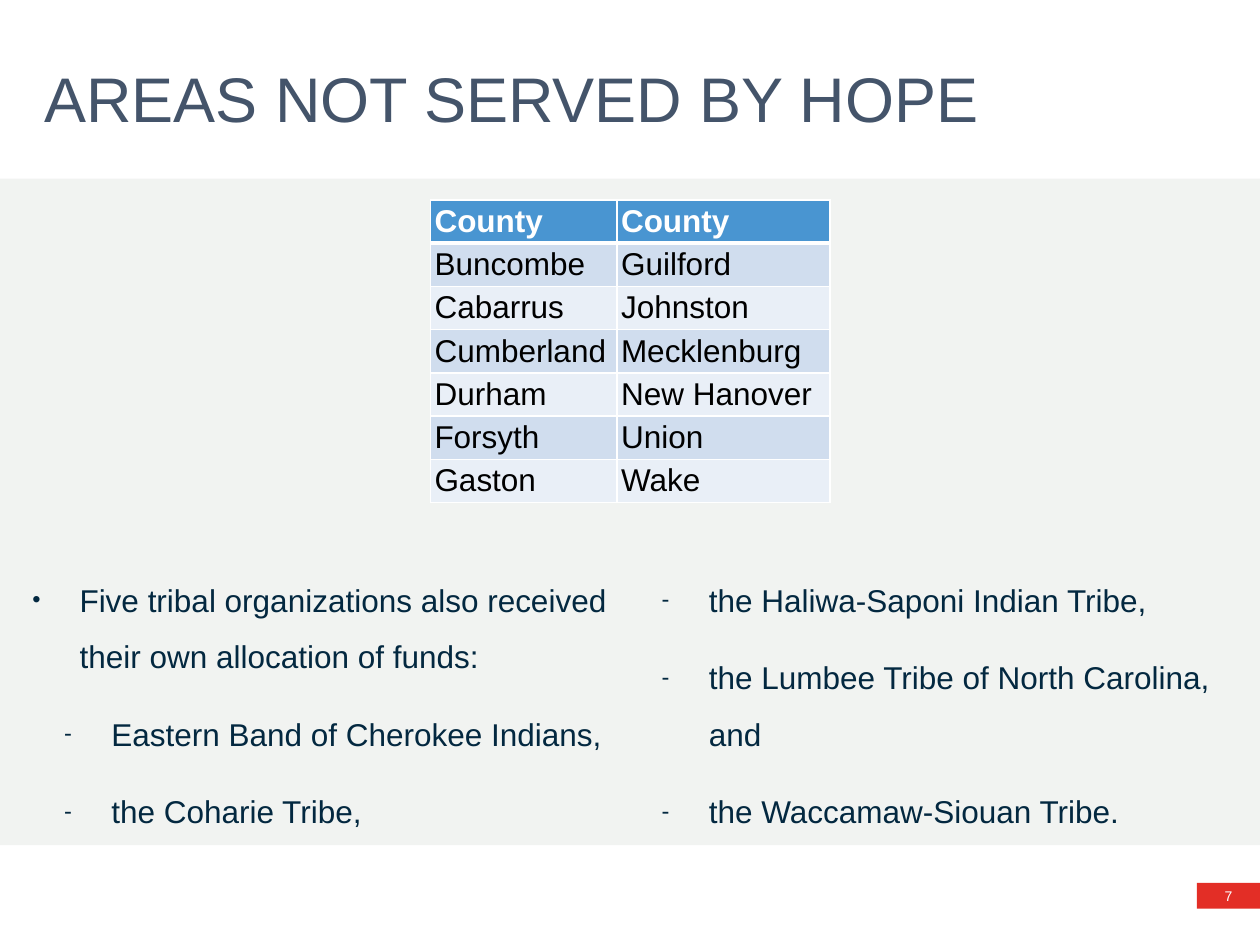
from lxml import etree
from pptx import Presentation
from pptx.dml.color import RGBColor
from pptx.enum import shapes, text
from pptx.oxml import ns
from pptx.util import Cm, Pt

COLORS = {
    "band": "F1F3F1", "badge": "E32E26", "title": "44546A", "body": "032840",
    "header": "4995D1", "odd": "D0DDEE", "even": "E9EFF7",
    "white": "FFFFFF", "black": "000000",
}
COUNTIES = [
    ("County", "County"),
    ("Buncombe", "Guilford"),
    ("Cabarrus", "Johnston"),
    ("Cumberland", "Mecklenburg"),
    ("Durham", "New Hanover"),
    ("Forsyth", "Union"),
    ("Gaston", "Wake"),
]
TRIBES = [
    "Eastern Band of Cherokee Indians,",
    "the Coharie Tribe,",
    "the Haliwa-Saponi Indian Tribe,",
    "the Lumbee Tribe of North Carolina, and",
    "the Waccamaw-Siouan Tribe.",
]


def rgb(name):
    return RGBColor.from_string(COLORS[name])


def add_xml(parent, tag, **attributes):
    return etree.SubElement(parent, ns.qn(tag), attributes)


def write(para, words, size=18, color="body", bold=False, align=text.PP_ALIGN.LEFT):
    """Add formatted words to a paragraph."""
    para.alignment = align
    span = para.add_run()
    span.text = words
    span.font.name = "Arial"
    span.font.size = Pt(size)
    span.font.bold = bold
    span.font.color.rgb = rgb(color)


def place(shape, box):
    shape.left, shape.top, shape.width, shape.height = (Cm(length) for length in box)


def set_insets(owner, inset):
    owner.margin_left = owner.margin_right = Cm(inset)
    owner.margin_top = owner.margin_bottom = Cm(inset)


def add_panel(page, box, color):
    panel = page.shapes.add_shape(
        shapes.MSO_SHAPE.RECTANGLE, *(Cm(length) for length in box))
    panel.shadow.inherit = False
    panel.fill.solid()
    panel.fill.fore_color.rgb = rgb(color)
    panel.line.fill.background()
    return panel


def add_band(page, box):
    """Tinted band behind the content."""
    band = add_panel(page, box, "band")
    page.shapes._spTree.insert(2, band._element)


def add_page_number(page, box, number):
    frame = add_panel(page, box, "badge").text_frame
    set_insets(frame, 0.13)
    frame.vertical_anchor = text.MSO_ANCHOR.MIDDLE
    write(frame.paragraphs[0], number, size=8, color="white",
          align=text.PP_ALIGN.CENTER)


def fill_title(page, box, words):
    title = page.shapes.title
    place(title, box)
    frame = title.text_frame
    frame.auto_size = text.MSO_AUTO_SIZE.NONE
    frame.vertical_anchor = text.MSO_ANCHOR.MIDDLE
    write(frame.paragraphs[0], words, size=36, color="title")


def set_bullet(para, mark, indent):
    props = para._p.get_or_add_pPr()
    props.set("marL", str(Cm(indent)))
    props.set("indent", str(-Cm(0.95)))
    add_xml(add_xml(props, "a:buClr"), "a:srgbClr", val=COLORS["body"])
    add_xml(props, "a:buSzPct", val="75000")
    add_xml(props, "a:buFont", typeface="Arial")
    add_xml(props, "a:buChar", char=mark)


def fill_list(page, box, lead, items):
    """Two-column list: a lead line, then dashed items."""
    body = page.placeholders[1]
    place(body, box)
    frame = body.text_frame
    frame.auto_size = text.MSO_AUTO_SIZE.NONE
    frame.vertical_anchor = text.MSO_ANCHOR.TOP
    frame._txBody.bodyPr.set("numCol", "2")
    for index, words in enumerate([lead, *items]):
        para = frame.add_paragraph() if index else frame.paragraphs[0]
        para.level = 1 if index else 0
        set_bullet(para, "-" if index else "•", 1.59 if index else 0.95)
        para.line_spacing = 1.5
        para.space_before = Pt(11.8 if index else 0)
        write(para, words)


def set_borders(cell, header):
    props = cell._tc.get_or_add_tcPr()
    for side in ("L", "R", "T", "B"):
        width = 3 if header and side == "B" else 1
        line = add_xml(props, f"a:ln{side}", w=str(Pt(width)))
        add_xml(add_xml(line, "a:solidFill"), "a:srgbClr", val=COLORS["white"])


def add_county_table(page, box, rows, widths):
    table = page.shapes.add_table(
        len(rows), len(widths), *(Cm(length) for length in box)).table
    for column, width in zip(table.columns, widths):
        column.width = Cm(width)
    for r, names in enumerate(rows):
        header = r == 0
        table.rows[r].height = Cm(box[3] / len(rows))
        for c, name in enumerate(names):
            cell = table.cell(r, c)
            set_insets(cell, 0.08)
            set_borders(cell, header)
            cell.fill.solid()
            cell.fill.fore_color.rgb = rgb(
                "header" if header else "odd" if r % 2 else "even")
            write(cell.text_frame.paragraphs[0], name, bold=header,
                  color="white" if header else "black")


def main():
    deck = Presentation()
    deck.slide_width, deck.slide_height = Cm(25.4), Cm(19.05)
    page = deck.slides.add_slide(deck.slide_layouts[1])

    # Background parts
    add_band(page, (0, 3.6, 25.4, 13.44))
    add_page_number(page, (24.13, 17.8, 1.27, 0.52), "7")

    # Content
    fill_title(page, (0.64, 0.33, 24.13, 3.28), "AREAS NOT SERVED BY HOPE")
    fill_list(page, (0.4, 11.2, 24.6, 7.04),
              "Five tribal organizations also received their own allocation of funds:",
              TRIBES)
    add_county_table(page, (8.68, 4.03, 8.05, 6.04), COUNTIES, (3.76, 4.29))

    deck.save("out.pptx")


if __name__ == "__main__":
    main()
